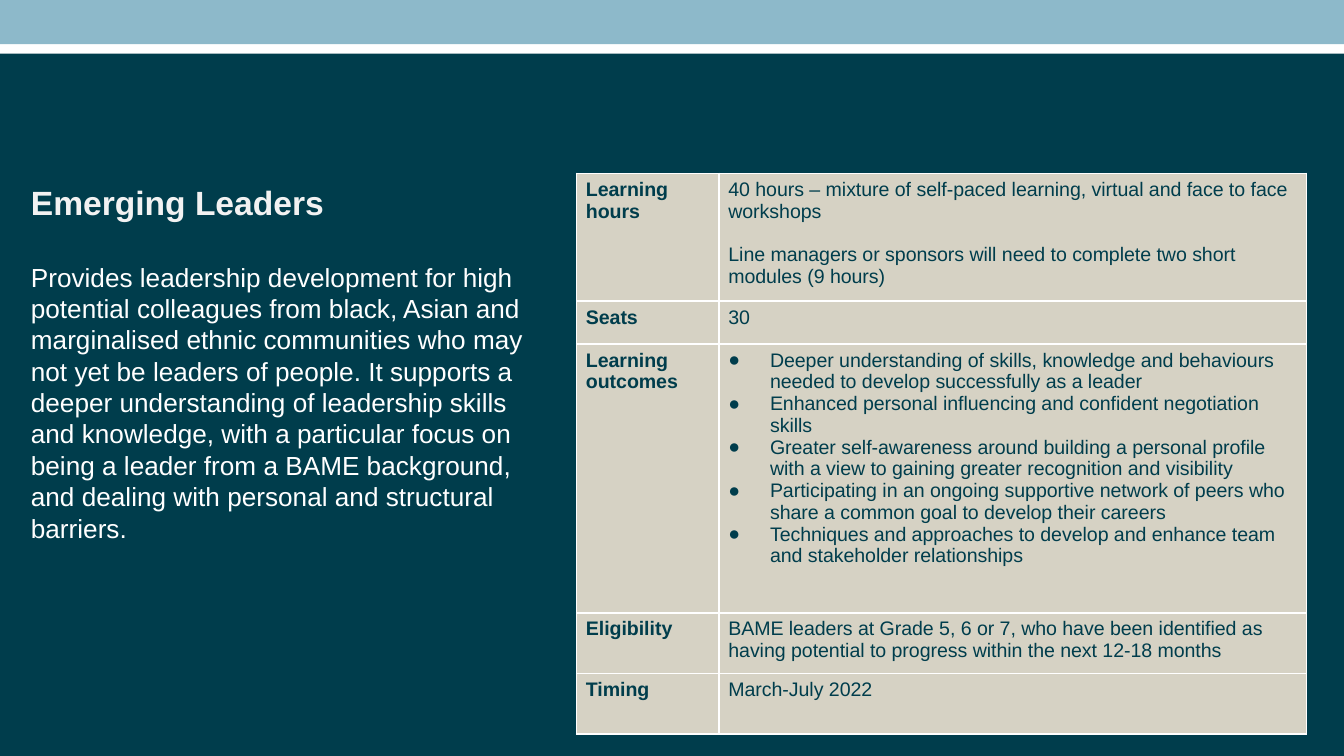
from lxml import etree
from pptx import Presentation
from pptx import util as u
from pptx.dml.color import RGBColor
from pptx.enum import shapes, text
from pptx.oxml import ns

COLOURS = {
    "band": "8DB9CA",
    "panel": "003D4C",
    "cell": "D6D2C4",
    "border": "FFFFFF",
    "heading": "F2F2F2",
    "summary": "FFFFFF",
}
HEADING = {"size": u.Pt(18), "bold": True, "name": "Arial"}
SUMMARY = {"size": u.Pt(14), "bold": False, "name": "Arial"}
LABEL = {"size": u.Pt(10.5), "bold": True, "name": "Arial"}
DETAIL = {"size": u.Pt(10.5), "bold": False, "name": "Arial"}

PROGRAMME = "Emerging Leaders"
DESCRIPTION = (
    "Provides leadership development for high potential colleagues from black, "
    "Asian and marginalised ethnic communities who may not yet be leaders of "
    "people. It supports a deeper understanding of leadership skills and "
    "knowledge, with a particular focus on being a leader from a BAME "
    "background, and dealing with personal and structural barriers."
)
OUTCOMES = [
    "Deeper understanding of skills, knowledge and behaviours needed to develop "
    "successfully as a leader",
    "Enhanced personal influencing and confident negotiation skills",
    "Greater self-awareness around building a personal profile with a view to "
    "gaining greater recognition and visibility",
    "Participating in an ongoing supportive network of peers who share a common "
    "goal to develop their careers",
    "Techniques and approaches to develop and enhance team and stakeholder "
    "relationships",
]
# label, details, row height in inches, bulleted
FACTS = [
    ("Learning hours", [
        "40 hours – mixture of self-paced learning, virtual and face to face "
        "workshops",
        "Line managers or sponsors will need to complete two short modules "
        "(9 hours)",
    ], 0.95, False),
    ("Seats", ["30"], 0.32, False),
    ("Learning outcomes", OUTCOMES, 2, True),
    ("Eligibility", [
        "BAME leaders at Grade 5, 6 or 7, who have been identified as having "
        "potential to progress within the next 12-18 months",
    ], 0.45, False),
    ("Timing", ["March-July 2022"], 0.45, False),
]


def rgb(key):
    return RGBColor.from_string(COLOURS[key])


def style(paragraph, font_format, colour):
    for name, value in font_format.items():
        setattr(paragraph.font, name, value)
    paragraph.font.color.rgb = rgb(colour)


def add_bar(slide, top, height, colour):
    """Add a full-width rectangle without an outline."""
    bar = slide.shapes.add_shape(
        shapes.MSO_SHAPE.RECTANGLE, 0, u.Inches(top), u.Inches(10), u.Inches(height))
    bar.shadow.inherit = False
    bar.fill.solid()
    bar.fill.fore_color.rgb = rgb(colour)
    bar.line.fill.background()


def add_bullet(paragraph):
    properties = paragraph._p.get_or_add_pPr()
    properties.set("marL", str(u.Inches(0.31)))
    properties.set("indent", str(u.Inches(-0.31)))
    bullet_colour = etree.SubElement(properties, ns.qn("a:buClr"))
    etree.SubElement(bullet_colour, ns.qn("a:srgbClr"), val=COLOURS["panel"])
    etree.SubElement(properties, ns.qn("a:buFont"), typeface="Arial")
    etree.SubElement(properties, ns.qn("a:buChar"), char="●")


def add_borders(cell):
    properties = cell._tc.get_or_add_tcPr()
    for position, side in enumerate(("lnL", "lnR", "lnT", "lnB")):
        border = etree.Element(ns.qn(f"a:{side}"), w=str(u.Pt(1)))
        fill = etree.SubElement(border, ns.qn("a:solidFill"))
        etree.SubElement(fill, ns.qn("a:srgbClr"), val=COLOURS["border"])
        properties.insert(position, border)


def fill_cell(cell, lines, font_format, bulleted=False):
    cell.margin_left = cell.margin_right = u.Inches(0.07)
    cell.margin_top = cell.margin_bottom = u.Inches(0.04)
    cell.fill.solid()
    cell.fill.fore_color.rgb = rgb("cell")
    add_borders(cell)
    cell.text = "\n".join(lines)
    for number, paragraph in enumerate(cell.text_frame.paragraphs):
        if bulleted:
            add_bullet(paragraph)
        elif number:
            paragraph.space_before = u.Pt(11.5)
        style(paragraph, font_format, "panel")


def add_fact_table(slide):
    table = slide.shapes.add_table(
        len(FACTS), 2, u.Inches(4.29), u.Inches(1.29),
        u.Inches(5.43), u.Inches(4.17)).table
    table.first_row = table.horz_banding = False
    for column, width in zip(table.columns, (1.06, 4.37)):
        column.width = u.Inches(width)
    for row, (label, details, height, bulleted) in zip(table.rows, FACTS):
        row.height = u.Inches(height)
        fill_cell(row.cells[0], [label], LABEL)
        fill_cell(row.cells[1], details, DETAIL, bulleted)


def place_title(slide):
    """Put the programme name and its description in the title placeholder."""
    title = slide.shapes.title
    slide.shapes.element.append(title.element)  # in front of the panel
    title.left, title.top = u.Inches(0.13), u.Inches(1.3)
    title.width, title.height = u.Inches(3.88), u.Inches(2.83)
    frame = title.text_frame
    frame.text = f"{PROGRAMME}\n{DESCRIPTION}"
    frame.word_wrap = True
    frame.vertical_anchor = text.MSO_ANCHOR.TOP
    frame.auto_size = text.MSO_AUTO_SIZE.SHAPE_TO_FIT_TEXT
    heading, summary = frame.paragraphs
    for paragraph in frame.paragraphs:
        paragraph.alignment = text.PP_ALIGN.LEFT
    summary.space_before = u.Pt(21)
    style(heading, HEADING, "heading")
    style(summary, SUMMARY, "summary")


def main():
    deck = Presentation()
    deck.slide_width, deck.slide_height = u.Inches(10), u.Inches(10 * 9 / 16)
    slide = deck.slides.add_slide(deck.slide_layouts[5])
    add_bar(slide, 0, 0.33, "band")
    add_bar(slide, 0.4, 5.23, "panel")
    add_fact_table(slide)
    place_title(slide)
    deck.save("out.pptx")


if __name__ == "__main__":
    main()
